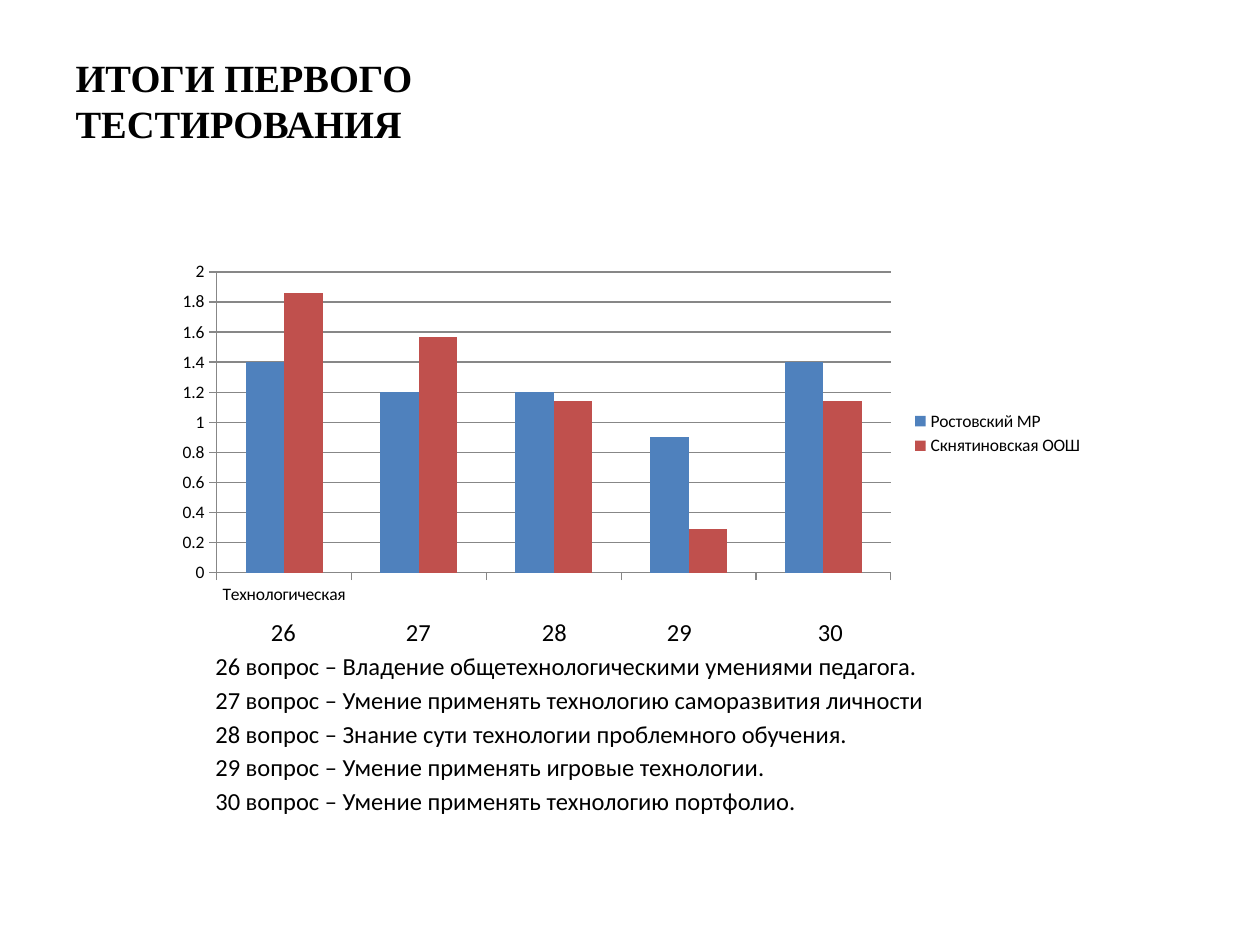
from dataclasses import dataclass

import lxml.etree
import pptx
import pptx.chart.data
import pptx.dml.color
import pptx.enum.chart
import pptx.enum.text
import pptx.oxml.ns
import pptx.util

EMU_PER_PX = 914400 / 126
AXIS_GRAY = "878787"


@dataclass
class Box:
    left: int
    top: int
    width: int
    height: int


@dataclass
class School:
    name: str
    scores: list[float]
    color: str


@dataclass
class Question:
    number: int
    topic: str
    center: int  # px from the left edge of the text


SCHOOLS = [
    School("Ростовский МР", [1.4, 1.2, 1.2, 0.9, 1.4], "4F81BD"),
    School("Скнятиновская ООШ", [1.86, 1.57, 1.14, 0.29, 1.14], "C0504D"),
]
QUESTIONS = [
    Question(26, "Владение общетехнологическими умениями педагога.", 68),
    Question(27, "Умение применять технологию саморазвития личности", 203),
    Question(28, "Знание сути технологии проблемного обучения.", 339),
    Question(29, "Умение применять игровые технологии.", 464),
    Question(30, "Умение применять технологию портфолио.", 615),
]


def px(length: int) -> pptx.util.Emu:
    return pptx.util.Emu(round(length * EMU_PER_PX))


def rgb(color: str) -> pptx.dml.color.RGBColor:
    return pptx.dml.color.RGBColor.from_string(color)


def set_font(font, name: str, size: float, bold: bool = False) -> None:
    font.name = name
    font.size = pptx.util.Pt(size)
    font.bold = bold
    font.color.rgb = rgb("000000")


def place(box: Box) -> tuple:
    return px(box.left), px(box.top), px(box.width), px(box.height)


def add_title(slide, box: Box, wording: str) -> None:
    title = slide.shapes.title
    title.left, title.top, title.width, title.height = place(box)
    frame = title.text_frame
    frame.text = wording
    frame.word_wrap = True
    frame.auto_size = pptx.enum.text.MSO_AUTO_SIZE.NONE
    frame.vertical_anchor = pptx.enum.text.MSO_ANCHOR.BOTTOM
    heading = frame.paragraphs[0]
    heading.alignment = pptx.enum.text.PP_ALIGN.LEFT
    set_font(heading.font, "Times New Roman", 22, bold=True)


def add_scores_chart(slide, box: Box) -> None:
    scores = pptx.chart.data.CategoryChartData()
    scores.categories = ["Технологическая"] + [""] * (len(QUESTIONS) - 1)
    for school in SCHOOLS:
        scores.add_series(school.name, school.scores)
    chart = slide.shapes.add_chart(
        pptx.enum.chart.XL_CHART_TYPE.COLUMN_CLUSTERED, *place(box), scores
    ).chart
    set_font(chart.font, "Calibri", 10)
    chart.has_title = False
    chart.has_legend = True
    chart.legend.position = pptx.enum.chart.XL_LEGEND_POSITION.RIGHT
    chart.legend.include_in_layout = False

    columns = chart.plots[0]
    columns.gap_width = 75 * len(SCHOOLS)
    columns.overlap = 0
    columns.vary_by_categories = False
    for series, school in zip(columns.series, SCHOOLS):
        series.format.fill.solid()
        series.format.fill.fore_color.rgb = rgb(school.color)

    score_axis = chart.value_axis
    score_axis.minimum_scale, score_axis.maximum_scale = 0, 2
    score_axis.major_unit = 0.2
    score_axis.has_major_gridlines = True
    for part in (score_axis, chart.category_axis, score_axis.major_gridlines):
        part.format.line.color.rgb = rgb(AXIS_GRAY)
        part.format.line.width = pptx.util.Pt(0.75)
    for axis in (score_axis, chart.category_axis):
        axis.major_tick_mark = pptx.enum.chart.XL_TICK_MARK.OUTSIDE


def add_center_tabs(paragraph, centers: list[int]) -> None:
    qn = pptx.oxml.ns.qn
    properties = paragraph._p.get_or_add_pPr()
    tabs = lxml.etree.SubElement(properties, qn("a:tabLst"))
    for center in centers:
        lxml.etree.SubElement(tabs, qn("a:tab"), pos=str(px(center)), algn="ctr")


def add_questions(slide, box: Box) -> None:
    frame = slide.shapes.add_textbox(*place(box)).text_frame
    frame.word_wrap = True

    # Question numbers under the column groups
    numbers = frame.paragraphs[0]
    numbers.text = "".join(f"\t{question.number}" for question in QUESTIONS)
    add_center_tabs(numbers, [question.center for question in QUESTIONS])
    set_font(numbers.font, "Calibri", 14)

    # Meaning of each question
    for question in QUESTIONS:
        line = frame.add_paragraph()
        line.text = f"{question.number} вопрос – {question.topic}"
        line.space_before = pptx.util.Pt(2.5)
        set_font(line.font, "Calibri", 14)


def main() -> None:
    deck = pptx.Presentation()
    deck.slide_width, deck.slide_height = px(1260), px(945)
    slide = deck.slides.add_slide(deck.slide_layouts[5])  # title only
    add_title(slide, Box(63, 38, 415, 115), "ИТОГИ ПЕРВОГО ТЕСТИРОВАНИЯ")
    add_questions(slide, Box(203, 611, 893, 238))
    add_scores_chart(slide, Box(164, 255, 932, 357))
    deck.save("out.pptx")


if __name__ == "__main__":
    main()
